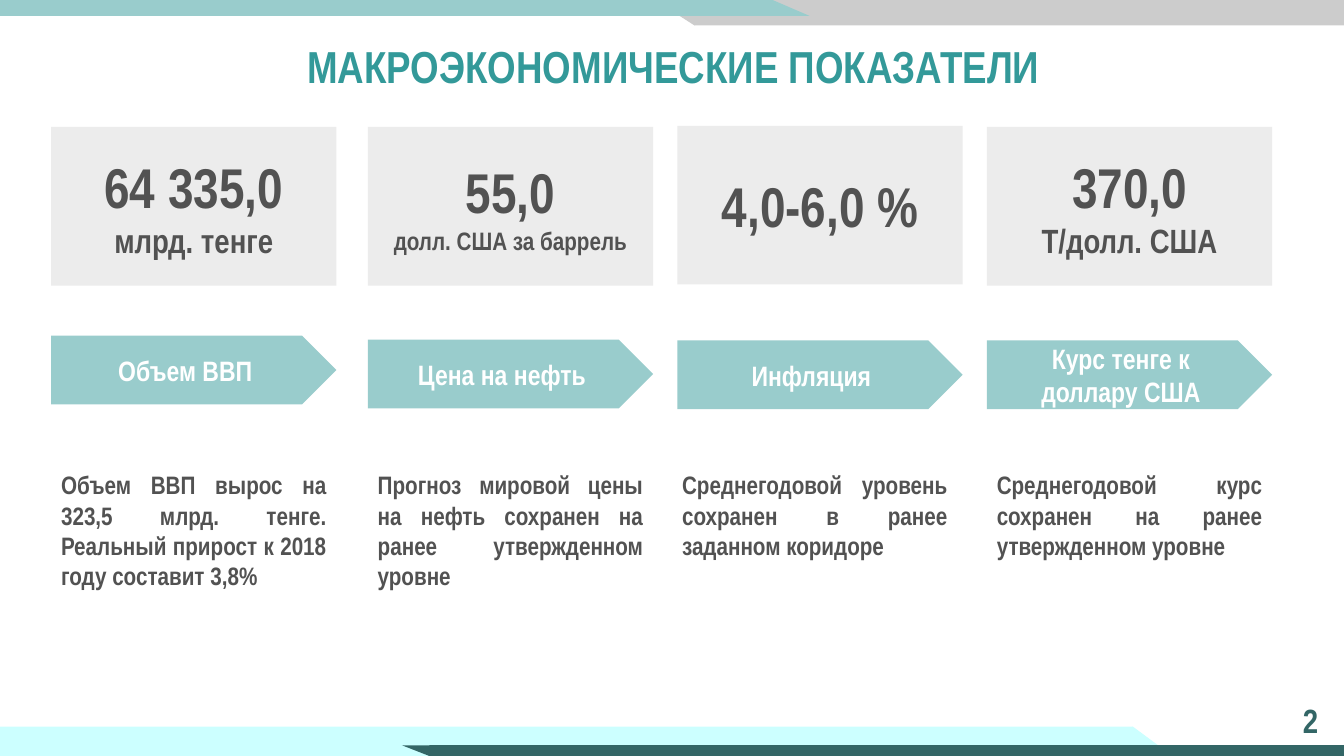
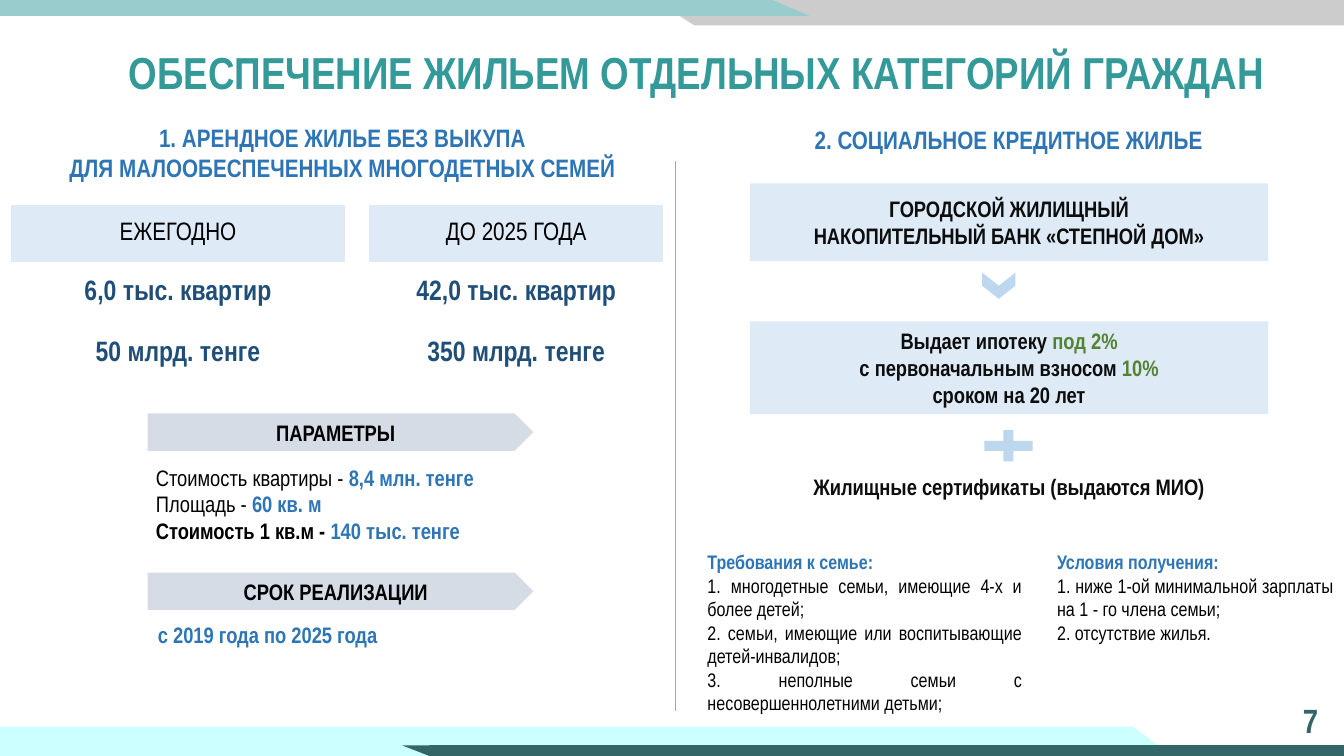
import dataclasses

import pptx
import pptx.dml.color
import pptx.enum.shapes
import pptx.enum.text
import pptx.oxml
import pptx.oxml.ns
import pptx.util

Cm = pptx.util.Cm
SHAPE = pptx.enum.shapes.MSO_SHAPE
ALIGN = pptx.enum.text.PP_ALIGN
ANCHOR = pptx.enum.text.MSO_ANCHOR
PLAIN_TABLE_STYLE = "{2D5ABB26-0587-4C30-8999-92F81FD0307C}"


@dataclasses.dataclass(frozen=True)
class Theme:
    font: str = "Arial Narrow"
    slide_width: float = 33.87
    slide_height: float = 19.05
    title: str = "339999"
    teal: str = "99CCCC"
    dark_teal: str = "336666"
    aqua: str = "CCFFFF"
    silver: str = "CCCCCC"
    card: str = "ECECEC"
    card_text: str = "525252"
    white: str = "FFFFFF"
    black: str = "000000"
    ink: str = "0D0D0D"
    blue: str = "2E75B6"
    navy: str = "1F4E79"
    green: str = "548235"
    pale_blue: str = "DEEBF7"
    light_blue: str = "BDD7EE"
    blue_grey: str = "D6DCE5"
    divider: str = "A6A6A6"
    title_size: int = 32
    figure_size: int = 40
    large_size: int = 24
    label_size: int = 20
    body_size: int = 18
    detail_size: int = 16
    small_size: int = 14


THEME = Theme()


@dataclasses.dataclass(frozen=True)
class Style:
    size: int
    color: str
    bold: bool = True
    align: object = ALIGN.CENTER
    line_spacing: float = 1.0


@dataclasses.dataclass(frozen=True)
class Indicator:
    left: float
    card_top: float
    arrow_top: float
    text_left: float
    figure: str
    unit: str
    unit_size: int
    name: tuple
    description: str


def rgb(color):
    return pptx.dml.color.RGBColor.from_string(color)


def format_font(font, color, bold):
    font.color.rgb = rgb(color)
    font.bold = bold


def write_text(frame, lines, style=None, anchor=ANCHOR.MIDDLE):
    """Each line is a string, a (string, Style) pair, or a list of (string, color, bold) runs."""
    frame.word_wrap = True
    frame.auto_size = pptx.enum.text.MSO_AUTO_SIZE.NONE
    frame.vertical_anchor = anchor
    for index, line in enumerate(lines):
        paragraph = frame.paragraphs[0] if index == 0 else frame.add_paragraph()
        content, line_style = line if isinstance(line, tuple) else (line, style)
        paragraph.alignment = line_style.align
        paragraph.line_spacing = line_style.line_spacing
        paragraph.font.name = THEME.font
        paragraph.font.size = pptx.util.Pt(line_style.size)
        if isinstance(content, str):
            format_font(paragraph.font, line_style.color, line_style.bold)
            paragraph.add_run().text = content
            continue
        for text, color, bold in content:
            run = paragraph.add_run()
            run.text = text
            format_font(run.font, color, bold)


def add_shape(slide, preset, area, fill, lines=(), style=None, rotation=0):
    shape = slide.shapes.add_shape(preset, *map(Cm, area))
    shape.shadow.inherit = False
    shape.fill.solid()
    shape.fill.fore_color.rgb = rgb(fill)
    shape.line.fill.background()
    shape.rotation = rotation
    write_text(shape.text_frame, lines, style)
    return shape


def add_text(slide, area, lines, style, anchor=ANCHOR.TOP):
    box = slide.shapes.add_textbox(*map(Cm, area))
    write_text(box.text_frame, lines, style, anchor)


def add_divider(slide, left, top, bottom):
    line = slide.shapes.add_connector(
        pptx.enum.shapes.MSO_CONNECTOR.STRAIGHT, Cm(left), Cm(top), Cm(left), Cm(bottom))
    line.line.color.rgb = rgb(THEME.divider)
    line.line.width = pptx.util.Pt(0.5)
    line._element.spPr.append(pptx.oxml.parse_xml(
        f"<a:effectLst {pptx.oxml.ns.nsdecls('a')}/>"))


def add_band(slide, left, right, top, height, tip_width, color):
    add_shape(slide, SHAPE.RECTANGLE, (left, top, right - left, height), color)
    tip_center, rotation = (left, 180) if left > 0 else (right, 0)
    add_shape(slide, SHAPE.ISOSCELES_TRIANGLE,
              (tip_center - tip_width / 2, top, tip_width, height), color, rotation=rotation)


def add_table(slide, left, top, widths, heights, rows):
    shape = slide.shapes.add_table(
        len(rows), len(widths), Cm(left), Cm(top), Cm(sum(widths)), Cm(sum(heights)))
    table = shape.table
    table.first_row = False
    table.horz_banding = False
    table._tbl.tblPr.find(pptx.oxml.ns.qn("a:tableStyleId")).text = PLAIN_TABLE_STYLE
    for column, width in zip(table.columns, widths):
        column.width = Cm(width)
    header = Style(THEME.body_size, THEME.black, bold=False)
    value = Style(THEME.label_size, THEME.navy)
    for row_index, (height, texts) in enumerate(zip(heights, rows)):
        table.rows[row_index].height = Cm(height)
        for column_index, text in enumerate(texts):
            cell = table.cell(row_index, column_index)
            cell.vertical_anchor = ANCHOR.MIDDLE
            if row_index == 0 and text:
                cell.fill.solid()
                cell.fill.fore_color.rgb = rgb(THEME.pale_blue)
            else:
                cell.fill.background()
            if text:
                write_text(cell.text_frame, [text], header if row_index == 0 else value)


def add_base_slide(presentation, title, title_area, number, line_spacing=1.0):
    slide = presentation.slides.add_slide(presentation.slide_layouts[5])
    placeholder = slide.shapes.title
    placeholder.left, placeholder.top, placeholder.width, placeholder.height = map(Cm, title_area)
    write_text(placeholder.text_frame, [title],
               Style(THEME.title_size, THEME.title, line_spacing=line_spacing))
    for band in (
        (17.5, THEME.slide_width, 0, 0.64, 2, THEME.silver),
        (0, 19.4, -0.03, 0.43, 2, THEME.teal),
        (0, 28.55, 18.31, 0.74, 2, THEME.aqua),
        (10.82, THEME.slide_width, 18.78, 0.27, 1.38, THEME.dark_teal),
    ):
        add_band(slide, *band)
    add_text(slide, (32.18, 17.65, 1.69, 1.12), [number],
             Style(THEME.large_size, THEME.dark_teal, line_spacing=0.9), ANCHOR.MIDDLE)
    return slide


def add_indicator(slide, indicator):
    width = 7.19
    lines = [(indicator.figure, Style(THEME.figure_size, THEME.card_text))]
    if indicator.unit:
        lines.append((indicator.unit, Style(indicator.unit_size, THEME.card_text)))
    add_shape(slide, SHAPE.RECTANGLE, (indicator.left, indicator.card_top, width, 4),
              THEME.card, lines)
    add_shape(slide, SHAPE.PENTAGON, (indicator.left, indicator.arrow_top, width, 1.73),
              THEME.teal, indicator.name, Style(THEME.label_size, THEME.white))
    add_text(slide, (indicator.text_left, 11.71, width, 4.98), [indicator.description],
             Style(THEME.body_size, THEME.card_text, align=ALIGN.JUSTIFY))


def build_indicators(presentation):
    slide = add_base_slide(presentation, "МАКРОЭКОНОМИЧЕСКИЕ ПОКАЗАТЕЛИ",
                           (0.43, 0.89, 33.1, 1.7), "2", line_spacing=0.9)
    for indicator in (
        Indicator(1.29, 3.2, 8.46, 1.29, "64 335,0", "млрд. тенге", THEME.large_size,
                  ("Объем ВВП",),
                  "Объем ВВП вырос на 323,5 млрд. тенге. Реальный прирост к 2018 году "
                  "составит 3,8%"),
        Indicator(9.27, 3.2, 8.56, 9.27, "55,0", "долл. США за баррель", THEME.body_size,
                  ("Цена на нефть",),
                  "Прогноз мировой цены на нефть сохранен на ранее утвержденном уровне"),
        Indicator(17.07, 3.17, 8.58, 16.94, "4,0-6,0 %", "", THEME.large_size,
                  ("Инфляция",),
                  "Среднегодовой уровень сохранен в ранее заданном коридоре"),
        Indicator(24.87, 3.2, 8.58, 24.87, "370,0", "Т/долл. США", THEME.large_size,
                  ("Курс тенге к", "доллару США"),
                  "Среднегодовой курс сохранен на ранее утвержденном уровне"),
    ):
        add_indicator(slide, indicator)


def add_rental_housing(slide):
    heading = Style(THEME.body_size, THEME.blue)
    add_shape(slide, SHAPE.RECTANGLE, (0.58, 2.97, 16.1, 1.75), THEME.white,
              ["1. АРЕНДНОЕ ЖИЛЬЕ БЕЗ ВЫКУПА",
               "ДЛЯ МАЛООБЕСПЕЧЕННЫХ МНОГОДЕТНЫХ СЕМЕЙ"], heading)
    add_table(slide, 0.28, 5.16, (8.41, 0.58, 7.42), (1.45, 1.55, 1.55), (
        ("ЕЖЕГОДНО", "", "ДО 2025 ГОДА"),
        ("6,0 тыс. квартир", "", "42,0 тыс. квартир"),
        ("50 млрд. тенге", "", "350 млрд. тенге"),
    ))
    for top, label in ((10.42, "ПАРАМЕТРЫ"), (14.43, "СРОК РЕАЛИЗАЦИИ")):
        add_shape(slide, SHAPE.PENTAGON, (3.72, top, 9.72, 0.94), THEME.blue_grey,
                  [label], Style(THEME.detail_size, THEME.black))
    detail = Style(THEME.detail_size, THEME.blue, align=ALIGN.LEFT)
    add_text(slide, (3.68, 11.56, 9.9, 2.31), [
        [(label, THEME.black, bold), (value, THEME.blue, True)]
        for label, value, bold in (
            ("Стоимость квартиры - ", "8,4 млн. тенге", False),
            ("Площадь - ", "60 кв. м", False),
            ("Стоимость 1 кв.м - ", "140 тыс. тенге", True),
        )
    ], detail)
    add_text(slide, (3.73, 15.52, 7.54, 0.94), ["с 2019 года по 2025 года"], detail)


def add_credit_housing(slide):
    left, width = 18.9, 13.06
    strong = Style(THEME.detail_size, THEME.ink)
    add_shape(slide, SHAPE.RECTANGLE, (17.37, 2.64, 16.1, 1.75), THEME.white,
              ["2. СОЦИАЛЬНОЕ КРЕДИТНОЕ ЖИЛЬЕ"], Style(THEME.body_size, THEME.blue))
    add_shape(slide, SHAPE.RECTANGLE, (left, 4.62, width, 1.96), THEME.pale_blue,
              ["ГОРОДСКОЙ ЖИЛИЩНЫЙ", "НАКОПИТЕЛЬНЫЙ БАНК «СТЕПНОЙ ДОМ»"], strong)
    add_shape(slide, SHAPE.CHEVRON, (24.84, 6.78, 0.66, 0.84), THEME.light_blue, rotation=90)
    add_shape(slide, SHAPE.RECTANGLE, (left, 8.1, width, 2.34), THEME.pale_blue, [
        [("Выдает ипотеку ", THEME.ink, True), ("под 2%", THEME.green, True)],
        [("с первоначальным взносом ", THEME.ink, True), ("10%", THEME.green, True)],
        "сроком на 20 лет",
    ], strong)
    add_shape(slide, SHAPE.MATH_PLUS, (24.59, 10.7, 1.65, 1.07), THEME.light_blue)
    add_text(slide, (left, 11.89, width, 0.76), ["Жилищные сертификаты (выдаются МИО)"],
             strong, ANCHOR.MIDDLE)
    caption = Style(THEME.small_size, THEME.blue, align=ALIGN.JUSTIFY)
    item = Style(THEME.small_size, THEME.black, bold=False, align=ALIGN.JUSTIFY)
    for area, title, items in (
        ((17.58, 13.74, 8.43, 4.04), "Требования к семье:",
         ["1. многодетные семьи, имеющие 4-х и более детей;",
          "2. семьи, имеющие или воспитывающие детей-инвалидов;",
          "3. неполные семьи с несовершеннолетними детьми;"]),
        ((26.39, 13.74, 7.47, 3.18), "Условия получения:",
         ["1. ниже 1-ой минимальной зарплаты на 1 - го члена семьи;",
          "2. отсутствие жилья."]),
    ):
        add_text(slide, area, [(title, caption), *items], item)


def build_housing(presentation):
    slide = add_base_slide(presentation, "ОБЕСПЕЧЕНИЕ ЖИЛЬЕМ ОТДЕЛЬНЫХ КАТЕГОРИЙ ГРАЖДАН",
                           (0, 0.58, THEME.slide_width, 2.44), "7")
    slide.shapes.title.text_frame.margin_left = Cm(1.52)
    add_rental_housing(slide)
    add_credit_housing(slide)
    add_divider(slide, 17.03, 4.06, 17.91)


def main():
    presentation = pptx.Presentation()
    presentation.slide_width = Cm(THEME.slide_width)
    presentation.slide_height = Cm(THEME.slide_height)
    build_indicators(presentation)
    build_housing(presentation)
    presentation.save("out.pptx")


if __name__ == "__main__":
    main()
